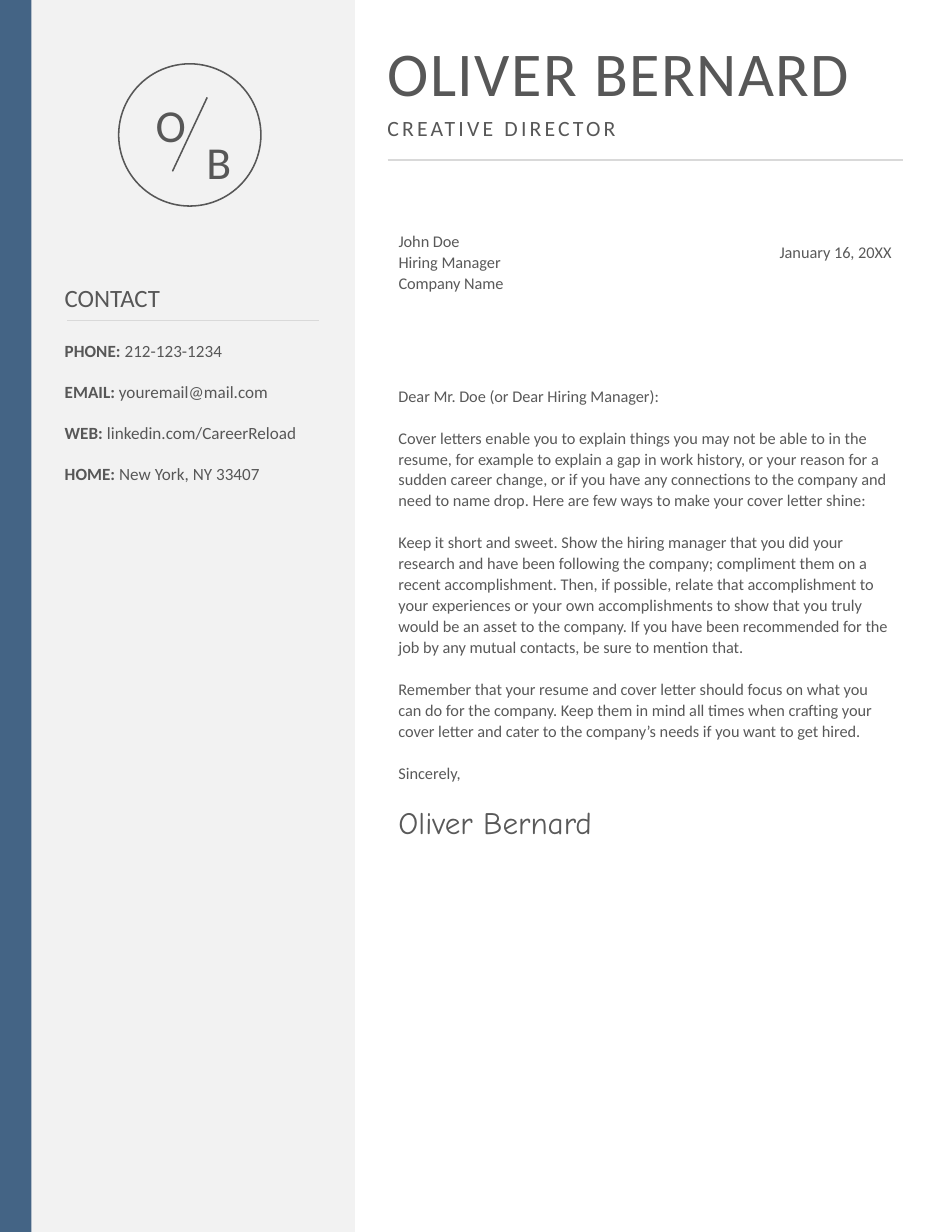
from dataclasses import dataclass, field

from lxml import etree
from pptx import Presentation
from pptx.dml.color import RGBColor
from pptx.enum.shapes import MSO_CONNECTOR, MSO_SHAPE
from pptx.enum.text import MSO_ANCHOR, MSO_AUTO_SIZE, PP_ALIGN
from pptx.oxml.ns import qn
from pptx.util import Inches, Length, Pt

LEFT, RIGHT, CENTER = PP_ALIGN.LEFT, PP_ALIGN.RIGHT, PP_ALIGN.CENTER
TOP = MSO_ANCHOR.TOP
NO_AUTOFIT = MSO_AUTO_SIZE.NONE
STRAIGHT = MSO_CONNECTOR.STRAIGHT
RECTANGLE, OVAL = MSO_SHAPE.RECTANGLE, MSO_SHAPE.OVAL
TITLE_ONLY = 5

HEADING_GRAY = RGBColor(0x57, 0x57, 0x57)
BODY_GRAY = RGBColor(0x59, 0x59, 0x59)
RULE_GRAY = RGBColor(0xD9, 0xD9, 0xD9)
PANEL_GRAY = RGBColor(0xF2, 0xF2, 0xF2)
STRIPE_BLUE = RGBColor(0x44, 0x64, 0x85)

# The page is a grid of tenth-inch cells
COLUMNS, ROWS = 85, 110
CELL = Inches(0.1)
MAIN_LEFT, MAIN_RIGHT = 34.6, 80.6
SIDE_LEFT = 4.8
CONTACT_TOP, CONTACT_STEP = 29.8, 3.64

DEFAULT_INSETS = (1, 0.5, 1, 0.5)
HEADER_INSETS = (0, 0.5, 1, 0.5)
NO_INSETS = (0, 0, 0, 0)


@dataclass
class Span:
    text: str
    size: float = 10.5
    color: RGBColor = BODY_GRAY
    bold: bool = False
    font: str = "Calibri"
    tracking: float = 0


@dataclass
class Para:
    spans: list[Span]
    format: dict = field(default_factory=dict)


@dataclass
class Area:
    left: float
    top: float
    width: float
    height: float

    def emu(self) -> list[Length]:
        return [cells(value) for value in (self.left, self.top, self.width, self.height)]


def cells(count: float) -> Length:
    return Length(round(count * CELL))


def write(box, paras: list[Para], insets=DEFAULT_INSETS) -> None:
    frame = box.text_frame
    sides = ("margin_left", "margin_top", "margin_right", "margin_bottom")
    settings = {"word_wrap": True, "auto_size": NO_AUTOFIT, "vertical_anchor": TOP}
    settings |= {side: cells(inset) for side, inset in zip(sides, insets)}
    for name, value in settings.items():
        setattr(frame, name, value)
    for index, item in enumerate(paras):
        para = frame.add_paragraph() if index else frame.paragraphs[0]
        defaults = {"alignment": LEFT, "line_spacing": 1.07, "space_before": Pt(0)}
        for name, value in (defaults | item.format).items():
            setattr(para, name, value)
        for part in item.spans:
            span = para.add_run()
            span.text = part.text
            formats = {"name": part.font, "size": Pt(part.size), "bold": part.bold}
            for name, value in formats.items():
                setattr(span.font, name, value)
            span.font.color.rgb = part.color
            if part.tracking:
                span._r.get_or_add_rPr().set("spc", str(round(part.tracking * 100)))


def add_text(shapes, area: Area, paras: list[Para], insets=DEFAULT_INSETS) -> None:
    write(shapes.add_textbox(*area.emu()), paras, insets)


def add_line(shapes, start: tuple, end: tuple, color: RGBColor) -> None:
    line = shapes.add_connector(STRAIGHT, *map(cells, start + end))
    line.line.color.rgb = color
    line.line.width = Pt(1)
    etree.SubElement(line._element.spPr, qn("a:effectLst"))


def add_band(shapes, width: float, color: RGBColor) -> None:
    band = shapes.add_shape(RECTANGLE, *Area(0, 0, width, ROWS).emu())
    band.shadow.inherit = False
    band.fill.solid()
    band.fill.fore_color.rgb = color
    band.line.fill.background()


def add_monogram(shapes) -> None:
    badge = shapes.add_group_shape().shapes
    for letter, area in (("O", Area(13, 7.8, 4.5, 5.4)), ("B", Area(17.4, 11.1, 4.3, 5.4))):
        span = Span(letter, 29.4, HEADING_GRAY, tracking=10.1)
        centered = {"alignment": CENTER, "line_spacing": Pt(41.2)}
        add_text(badge, area, [Para([span], centered)], NO_INSETS)
    add_line(badge, (15.4, 15.3), (18.5, 8.7), HEADING_GRAY)
    ring = badge.add_shape(OVAL, *Area(10.6, 5.7, 12.7, 12.7).emu())
    ring.shadow.inherit = False
    ring.fill.background()
    ring.line.color.rgb = HEADING_GRAY
    ring.line.width = Pt(1)


CONTACTS = {
    "PHONE:": "212-123-1234",
    "EMAIL:": "youremail@mail.com",
    "WEB:": "linkedin.com/CareerReload",
    "HOME:": "New York, NY 33407",
}
RECIPIENT = ("John Doe", "Hiring Manager", "Company Name")
LETTER = (
    "Dear Mr. Doe (or Dear Hiring Manager):",
    "Cover letters enable you to explain things you may not be able to in the resume, "
    "for example to explain a gap in work history, or your reason for a sudden career "
    "change, or if you have any connections to the company and need to name drop. "
    "Here are few ways to make your cover letter shine:",
    "Keep it short and sweet. Show the hiring manager that you did your research and have "
    "been following the company; compliment them on a recent accomplishment. Then, if "
    "possible, relate that accomplishment to your experiences or your own accomplishments "
    "to show that you truly would be an asset to the company. If you have been recommended "
    "for the job by any mutual contacts, be sure to mention that.",
    "Remember that your resume and cover letter should focus on what you can do for the "
    "company. Keep them in mind all times when crafting your cover letter and cater to the "
    "company’s needs if you want to get hired.",
    "Sincerely,",
)


def main() -> None:
    deck = Presentation()
    deck.slide_width, deck.slide_height = cells(COLUMNS), cells(ROWS)
    page = deck.slides.add_slide(deck.slide_layouts[TITLE_ONLY])
    shapes = page.shapes

    # Side panel and stripe
    add_band(shapes, 31.7, PANEL_GRAY)
    add_band(shapes, 2.8, STRIPE_BLUE)

    # Name and role
    title = shapes.title
    title.left, title.top, title.width, title.height = Area(MAIN_LEFT, 2.1, 49.1, 7.5).emu()
    write(title, [Para([Span("OLIVER BERNARD", 40, HEADING_GRAY, tracking=1)])], HEADER_INSETS)
    role = Span("CREATIVE DIRECTOR", 14, HEADING_GRAY, tracking=2)
    add_text(shapes, Area(MAIN_LEFT, 9.6, 29.3, 4.7), [Para([role])], HEADER_INSETS)
    add_line(shapes, (MAIN_LEFT, 14.3), (MAIN_RIGHT, 14.3), RULE_GRAY)

    # Monogram and contact details
    add_monogram(shapes)
    heading = Span("CONTACT", 16, HEADING_GRAY)
    add_text(shapes, Area(SIDE_LEFT, 24.6, 14.7, 4.2), [Para([heading])])
    add_line(shapes, (6, 28.6), (28.5, 28.6), RULE_GRAY)
    for row, (label, value) in enumerate(CONTACTS.items()):
        spans = [Span(label, 11, HEADING_GRAY, True), Span(f" {value}", 11, HEADING_GRAY)]
        area = Area(SIDE_LEFT, CONTACT_TOP + row * CONTACT_STEP, 24.3, 3)
        add_text(shapes, area, [Para(spans)])

    # Recipient and date
    add_text(shapes, Area(MAIN_LEFT, 20, 19.1, 6.7), [Para([Span(name)]) for name in RECIPIENT])
    date = Para([Span("January 16, 20XX")], {"alignment": RIGHT})
    add_text(shapes, Area(MAIN_RIGHT - 15.5, 21, 15.5, 2.9), [date])

    # Letter and signature
    letter = [Para([Span(text)], {"space_before": Pt(13.5 if row else 0)})
              for row, text in enumerate(LETTER)]
    letter[0].format["line_spacing"] = 1.15
    signature = Span("Oliver Bernard", 20, font="Comic Neue")
    letter.append(Para([signature], {"space_before": Pt(12)}))
    add_text(shapes, Area(MAIN_LEFT, 33.7, MAIN_RIGHT - MAIN_LEFT, 44.4), letter)

    deck.save("out.pptx")


if __name__ == "__main__":
    main()
